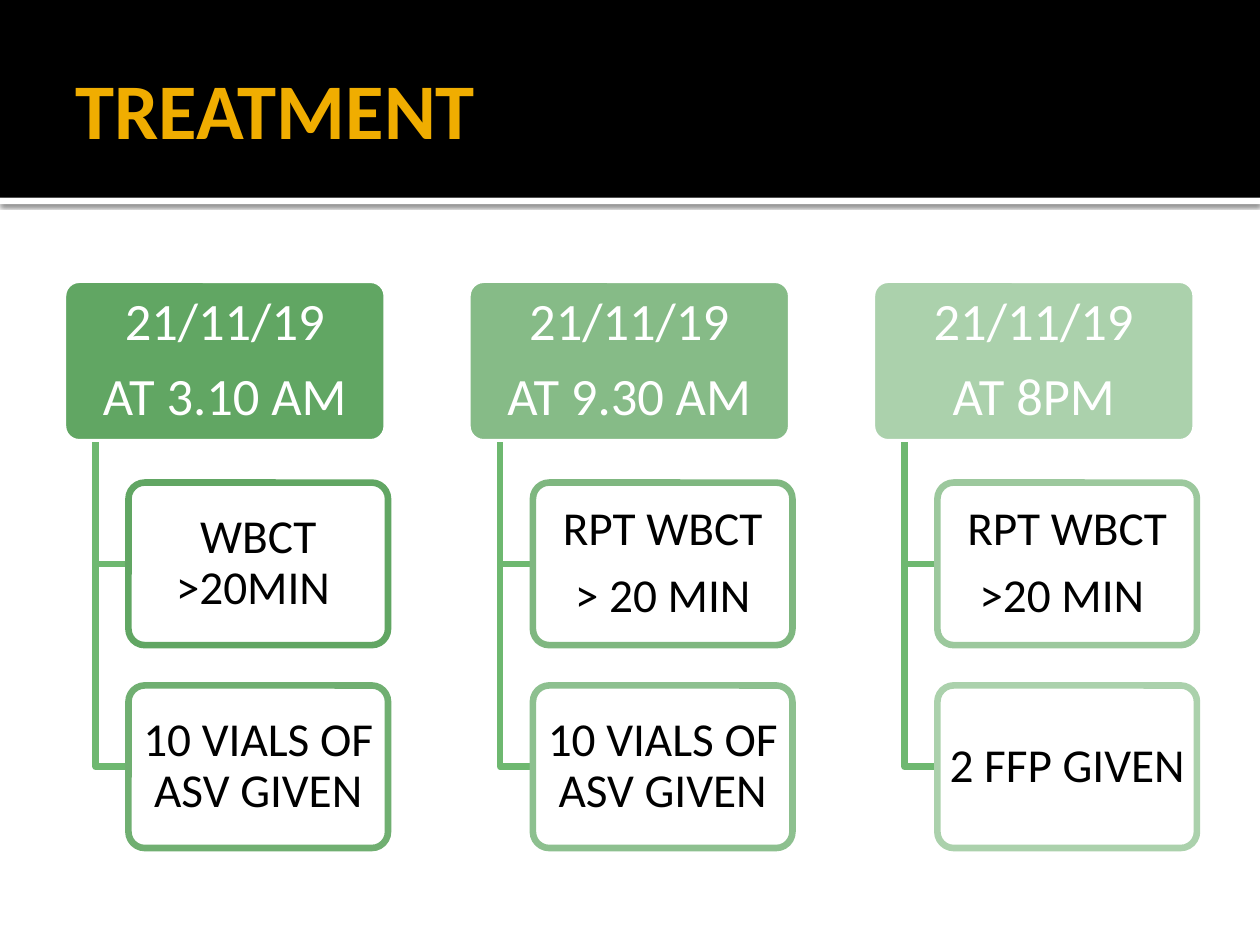
"""Build the TREATMENT slide: three dated columns with two steps each."""
from lxml.etree import SubElement
from pptx import Presentation
from pptx.dml.color import RGBColor
from pptx.enum.shapes import MSO_SHAPE
from pptx.enum.text import MSO_ANCHOR, PP_ALIGN
from pptx.oxml.ns import qn
from pptx.util import Inches, Pt

BLACK = RGBColor(0x00, 0x00, 0x00)
WHITE = RGBColor(0xFF, 0xFF, 0xFF)
GOLD = RGBColor(0xF0, 0xAD, 0x00)
BRANCH_GREEN = RGBColor(0x6E, 0xB8, 0x70)
GREEN_1 = RGBColor(0x61, 0xA6, 0x63)
GREEN_2 = RGBColor(0x70, 0xAF, 0x71)
GREEN_3 = RGBColor(0x7F, 0xB7, 0x80)
GREEN_4 = RGBColor(0x86, 0xBB, 0x87)
GREEN_5 = RGBColor(0x8D, 0xC0, 0x8F)
GREEN_6 = RGBColor(0x9C, 0xC8, 0x9D)
GREEN_7 = RGBColor(0xAB, 0xD1, 0xAC)

FONT = "Calibri"
LINE_WIDTH = Pt(3.78)
BOX_HEIGHT = 1.29
HEADER_TOP = 2.22
COLUMN_PITCH = 3.21
ROW_PITCH = 1.61

COLUMNS = [
    (["21/11/19", "AT 3.10 AM"], GREEN_1,
     [(["WBCT >20MIN "], GREEN_1), (["10 VIALS OF ASV GIVEN"], GREEN_2)]),
    (["21/11/19", "AT 9.30 AM"], GREEN_4,
     [(["RPT WBCT", "> 20 MIN"], GREEN_3), (["10 VIALS OF ASV GIVEN"], GREEN_5)]),
    (["21/11/19", "AT 8PM"], GREEN_7,
     [(["RPT WBCT", ">20 MIN "], GREEN_6), (["2 FFP GIVEN"], GREEN_7)]),
]


def add_bar(page, top, height, color):
    bar = page.shapes.add_shape(
        MSO_SHAPE.RECTANGLE, 0, Inches(top), Inches(10), Inches(height))
    bar.shadow.inherit = False
    bar.fill.solid()
    bar.fill.fore_color.rgb = color
    bar.line.fill.background()
    page.shapes.title.element.addprevious(bar.element)
    return bar


def add_box(page, left, top, width, lines, fill, outline, color, size):
    box = page.shapes.add_shape(
        MSO_SHAPE.ROUNDED_RECTANGLE,
        Inches(left), Inches(top), Inches(width), Inches(BOX_HEIGHT))
    box.adjustments[0] = 0.1
    box.shadow.inherit = False
    box.fill.solid()
    box.fill.fore_color.rgb = fill
    box.line.color.rgb = outline
    box.line.width = LINE_WIDTH
    frame = box.text_frame
    frame.word_wrap = True
    frame.vertical_anchor = MSO_ANCHOR.MIDDLE
    frame.margin_left = frame.margin_right = Inches(0.05)
    frame.margin_top = frame.margin_bottom = Inches(0.04)
    frame.text = "\n".join(lines)
    for para in frame.paragraphs:
        para.alignment = PP_ALIGN.CENTER
        para.line_spacing = 0.9
        para.space_after = Pt(0.35 * size)
        para.font.name = FONT
        para.font.size = Pt(size)
        para.font.color.rgb = color


deck = Presentation()
deck.slide_width = Inches(10)
deck.slide_height = Inches(7.5)
page = deck.slides.add_slide(deck.slide_layouts[5])

band = add_bar(page, 1.57, 0.05, WHITE)
effects = band.element.spPr.find(qn("a:effectLst"))
shadow = SubElement(effects, qn("a:outerShdw"), blurRad=str(Pt(2.5)),
                    dist=str(Pt(0.8)), dir="5400000", rotWithShape="0")
shadow_color = SubElement(shadow, qn("a:srgbClr"), val=str(BLACK))
SubElement(shadow_color, qn("a:alpha"), val="60000")
add_bar(page, 0, 1.57, BLACK)

title = page.shapes.title
title.left, title.top = Inches(0.5), Inches(0.17)
title.width, title.height = Inches(9), Inches(1.37)
frame = title.text_frame
frame.text = "TREATMENT"
frame.vertical_anchor = MSO_ANCHOR.MIDDLE
frame.margin_left = Inches(0.1)
frame.margin_right = frame.margin_top = frame.margin_bottom = Inches(0.05)
para = frame.paragraphs[0]
para.alignment = PP_ALIGN.LEFT
para.font.name = FONT
para.font.size = Pt(45)
para.font.bold = True
para.font.color.rgb = GOLD

for column, (heading, heading_fill, steps) in enumerate(COLUMNS):
    left = 0.5 + column * COLUMN_PITCH
    trunk = left + 0.26
    step_left = trunk + 0.26
    header_bottom = HEADER_TOP + BOX_HEIGHT
    add_box(page, left, HEADER_TOP, 2.57, heading, heading_fill, WHITE, WHITE, 30)
    for row, (lines, outline) in enumerate(steps):
        step_top = HEADER_TOP + (row + 1) * ROW_PITCH
        step_middle = step_top + BOX_HEIGHT / 2
        builder = page.shapes.build_freeform(Inches(trunk), Inches(header_bottom))
        builder.add_line_segments(
            [(Inches(trunk), Inches(step_middle)),
             (Inches(step_left), Inches(step_middle))], close=False)
        branch = builder.convert_to_shape()
        branch.shadow.inherit = False
        branch.fill.background()
        branch.line.color.rgb = BRANCH_GREEN
        branch.line.width = LINE_WIDTH
        add_box(page, step_left, step_top, 2.06, lines, WHITE, outline, BLACK, 27)

deck.save("out.pptx")
